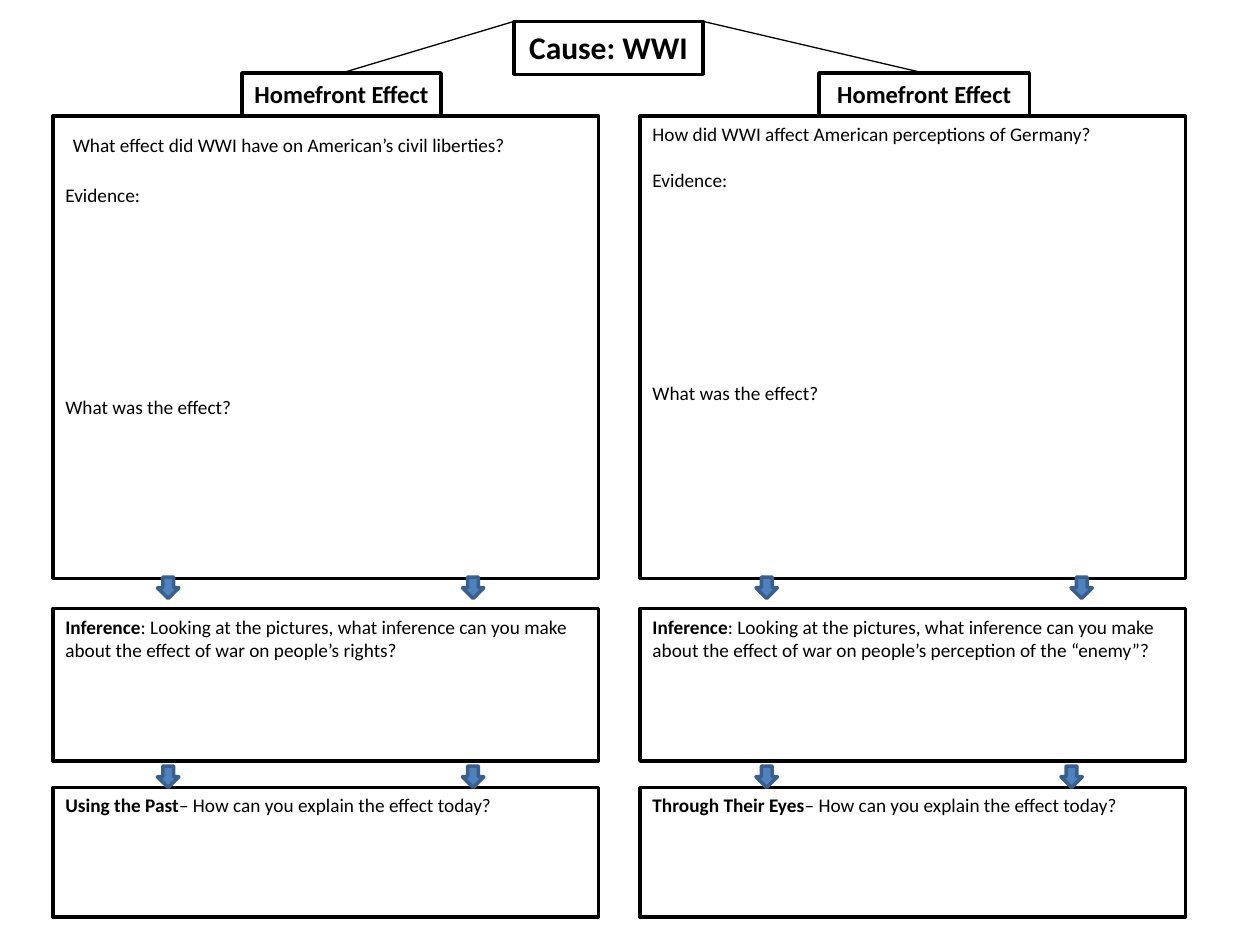
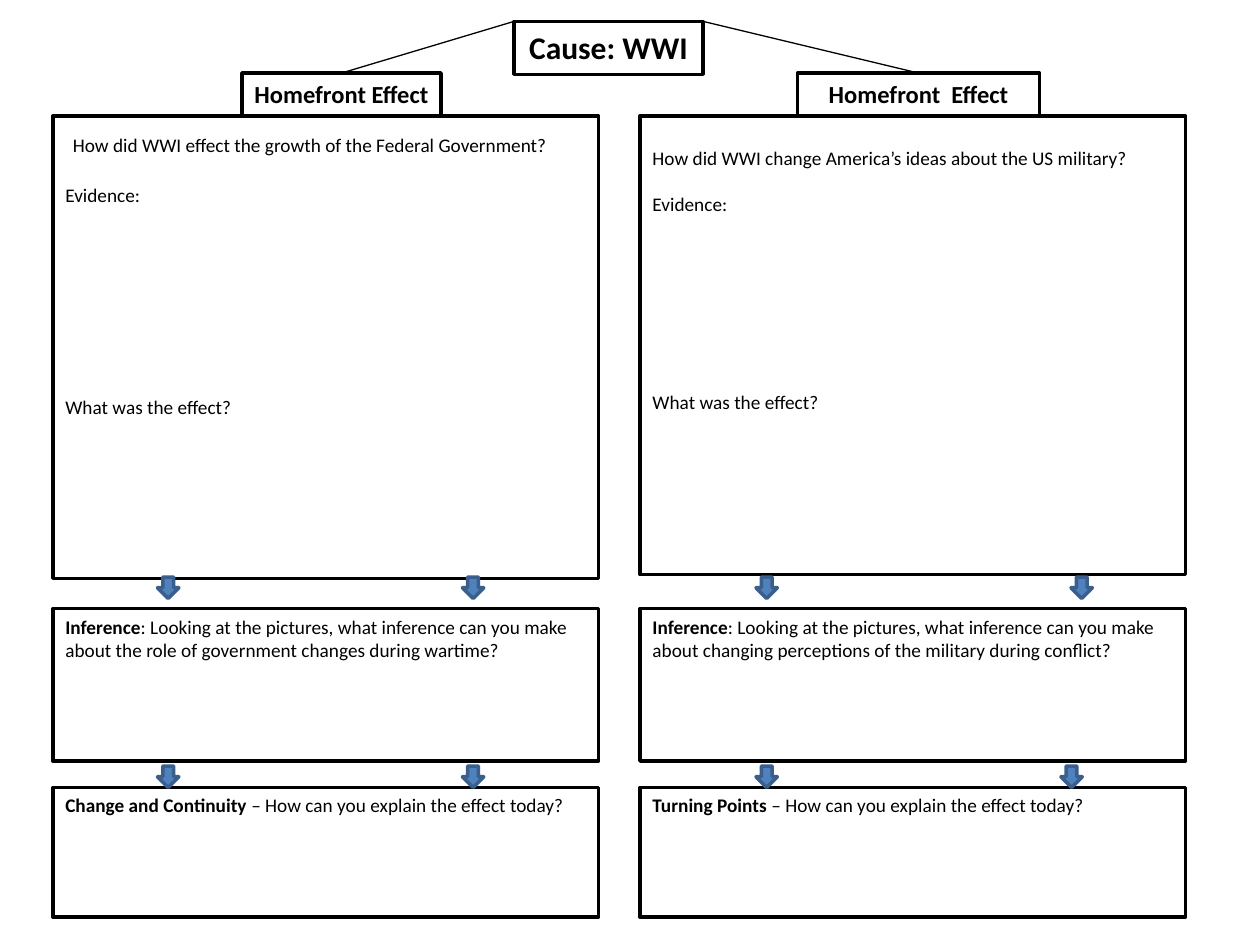
from dataclasses import dataclass

from lxml import etree
from pptx import Presentation
from pptx.dml.color import RGBColor
from pptx.enum.shapes import MSO_CONNECTOR, MSO_SHAPE
from pptx.enum.text import MSO_ANCHOR, PP_ALIGN
from pptx.oxml.ns import qn
from pptx.shapes.autoshape import Shape
from pptx.slide import Slide
from pptx.util import Inches, Pt

RECTANGLE = MSO_SHAPE.RECTANGLE
DOWN_ARROW = MSO_SHAPE.DOWN_ARROW
STRAIGHT = MSO_CONNECTOR.STRAIGHT
TOP = MSO_ANCHOR.TOP
LEFT = PP_ALIGN.LEFT
CENTER = PP_ALIGN.CENTER

FONT = "Calibri"
BLACK, WHITE = "000000", "FFFFFF"
ARROW_FILL, ARROW_LINE = "4F81BD", "3A5F8C"
BODY_SIZE, HEADING_SIZE, CAUSE_SIZE = 11, 14, 18

COLUMN_WIDTH = 4.33
HEADING_TOP, HEADING_HEIGHT = 0.58, 0.34
EVIDENCE_TOP = 0.92
INFERENCE_TOP, INFERENCE_HEIGHT = 4.83, 1.21
THEME_TOP, THEME_HEIGHT = 6.25, 1.03
ARROW_SIZE = 0.17
ARROW_TOPS = (4.58, 6.08)
SIDE_INSET, TOP_INSET = 0.1, 0.05
HEADING_INSET = 0.05


@dataclass(frozen=True)
class Box:
    """A rectangle in inches."""
    left: float
    top: float
    width: float
    height: float

    @property
    def center(self) -> float:
        """Return the horizontal centre."""
        return self.left + self.width / 2

    @property
    def right(self) -> float:
        """Return the right edge."""
        return self.left + self.width


@dataclass(frozen=True)
class Line:
    """A paragraph: a bold lead, plain text and its spacing."""
    text: str = ""
    bold: str = ""
    space_before: float = 0
    indent: float = 0


@dataclass(frozen=True)
class Side:
    """The place of a column and of its arrows."""
    left: float
    arrow_rows: tuple[tuple[float, float], ...]


@dataclass(frozen=True)
class Column:
    """The wording and the spacing of one column."""
    side: Side
    heading: str
    heading_left: float
    heading_width: float
    question: str
    inference: str
    theme: str
    top_inset: float = TOP_INSET
    question_indent: float = 0
    evidence_gap: float = 13.4
    effect_gap: float = 108
    evidence_height: float = 3.67


CAUSE_BOX = Box(4.08, 0.17, 1.5, 0.42)
LEFT_SIDE = Side(0.42, ((1.25, 3.67), (1.25, 3.67)))
RIGHT_SIDE = Side(5.08, ((6, 8.5), (6, 8.42)))


def left_column(question: str, inference: str, theme: str) -> Column:
    """Return a left column, which has the same layout on each slide."""
    return Column(LEFT_SIDE, "Homefront Effect", 1.92, 1.58, question, inference, theme,
                  top_inset=0.14, question_indent=0.06, evidence_gap=15)


SLIDES = (
    (
        left_column("What effect did WWI have on American’s civil liberties?",
                    "the effect of war on people’s rights?", "Using the Past"),
        Column(RIGHT_SIDE, "Homefront Effect", 6.5, 1.67,
               "How did WWI affect American perceptions of Germany?",
               "the effect of war on people’s perception of the “enemy”?",
               "Through Their Eyes"),
    ),
    (
        left_column("How did WWI effect the growth of the Federal Government?",
                    "the role of government changes during wartime?",
                    "Change and Continuity "),
        Column(RIGHT_SIDE, "Homefront  Effect", 6.33, 1.92,
               "How did WWI change America’s ideas about the US military?",
               "changing perceptions of the military during conflict?",
               "Turning Points ", top_inset=0.24, effect_gap=99.5, evidence_height=3.64),
    ),
)


def color(value: str) -> RGBColor:
    """Turn a hex string into a colour."""
    return RGBColor.from_string(value)


def add_preset(slide: Slide, kind: MSO_SHAPE, box: Box, fill: str, line: str) -> Shape:
    """Add a filled and outlined preset shape without shadow."""
    shape = slide.shapes.add_shape(kind, Inches(box.left), Inches(box.top),
                                   Inches(box.width), Inches(box.height))
    shape.shadow.inherit = False
    shape.fill.solid()
    shape.fill.fore_color.rgb = color(fill)
    shape.line.color.rgb = color(line)
    shape.line.width = Pt(2)
    return shape


def add_text_box(slide: Slide, box: Box, lines: tuple[Line, ...], size: float = BODY_SIZE,
                 alignment: PP_ALIGN = LEFT, side_inset: float = SIDE_INSET,
                 top_inset: float = TOP_INSET) -> None:
    """Add a framed box holding the given lines."""
    frame = add_preset(slide, RECTANGLE, box, WHITE, BLACK).text_frame
    frame.word_wrap = True
    frame.vertical_anchor = TOP
    frame.margin_left = frame.margin_right = Inches(side_inset)
    frame.margin_top = Inches(top_inset)
    frame.margin_bottom = Inches(TOP_INSET)
    for index, line in enumerate(lines):
        paragraph = frame.add_paragraph() if index else frame.paragraphs[0]
        paragraph.alignment = alignment
        paragraph.space_before = Pt(line.space_before)
        if line.indent:
            paragraph_format = paragraph._p.get_or_add_pPr()
            paragraph_format.set("marL", str(Inches(line.indent)))
            paragraph_format.set("indent", "0")
        for text, bold in ((line.bold, True), (line.text, False)):
            if text:
                run = paragraph.add_run()
                run.text = text
                run.font.name = FONT
                run.font.size = Pt(size)
                run.font.bold = bold
                run.font.color.rgb = color(BLACK)


def add_heading(slide: Slide, box: Box, text: str, size: float) -> None:
    """Add a centred bold label."""
    add_text_box(slide, box, (Line(bold=text),), size, CENTER, HEADING_INSET)


def add_branch(slide: Slide, cause_x: float, heading_x: float) -> None:
    """Join a corner of the cause to the top of a heading."""
    connector = slide.shapes.add_connector(STRAIGHT, Inches(cause_x), Inches(CAUSE_BOX.top),
                                           Inches(heading_x), Inches(HEADING_TOP))
    connector.line.color.rgb = color(BLACK)
    connector.line.width = Pt(0.75)
    etree.SubElement(connector._element.spPr, qn("a:effectLst"))


def add_column(slide: Slide, column: Column) -> None:
    """Draw the boxes, the heading and the arrows of one column."""
    left = column.side.left
    add_text_box(
        slide, Box(left, EVIDENCE_TOP, COLUMN_WIDTH, column.evidence_height),
        (Line(column.question, indent=column.question_indent),
         Line("Evidence:", space_before=column.evidence_gap),
         Line("What was the effect?", space_before=column.effect_gap)),
        top_inset=column.top_inset)
    inference = f": Looking at the pictures, what inference can you make about {column.inference}"
    add_text_box(slide, Box(left, INFERENCE_TOP, COLUMN_WIDTH, INFERENCE_HEIGHT),
                 (Line(inference, "Inference"),))
    add_text_box(slide, Box(left, THEME_TOP, COLUMN_WIDTH, THEME_HEIGHT),
                 (Line("– How can you explain the effect today?", column.theme),))
    heading_box = Box(column.heading_left, HEADING_TOP, column.heading_width, HEADING_HEIGHT)
    add_heading(slide, heading_box, column.heading, HEADING_SIZE)
    cause_x = CAUSE_BOX.left if column.side is LEFT_SIDE else CAUSE_BOX.right
    add_branch(slide, cause_x, heading_box.center)
    for top, arrow_lefts in zip(ARROW_TOPS, column.side.arrow_rows):
        for arrow_left in arrow_lefts:
            add_preset(slide, DOWN_ARROW, Box(arrow_left, top, ARROW_SIZE, ARROW_SIZE),
                       ARROW_FILL, ARROW_LINE)


def main() -> None:
    """Build and save the worksheets."""
    presentation = Presentation()
    presentation.slide_width = Inches(10)
    presentation.slide_height = Inches(7.5)
    for columns in SLIDES:
        slide = presentation.slides.add_slide(presentation.slide_layouts[6])
        add_heading(slide, CAUSE_BOX, "Cause: WWI", CAUSE_SIZE)
        for column in columns:
            add_column(slide, column)
    presentation.save("out.pptx")


if __name__ == "__main__":
    main()
